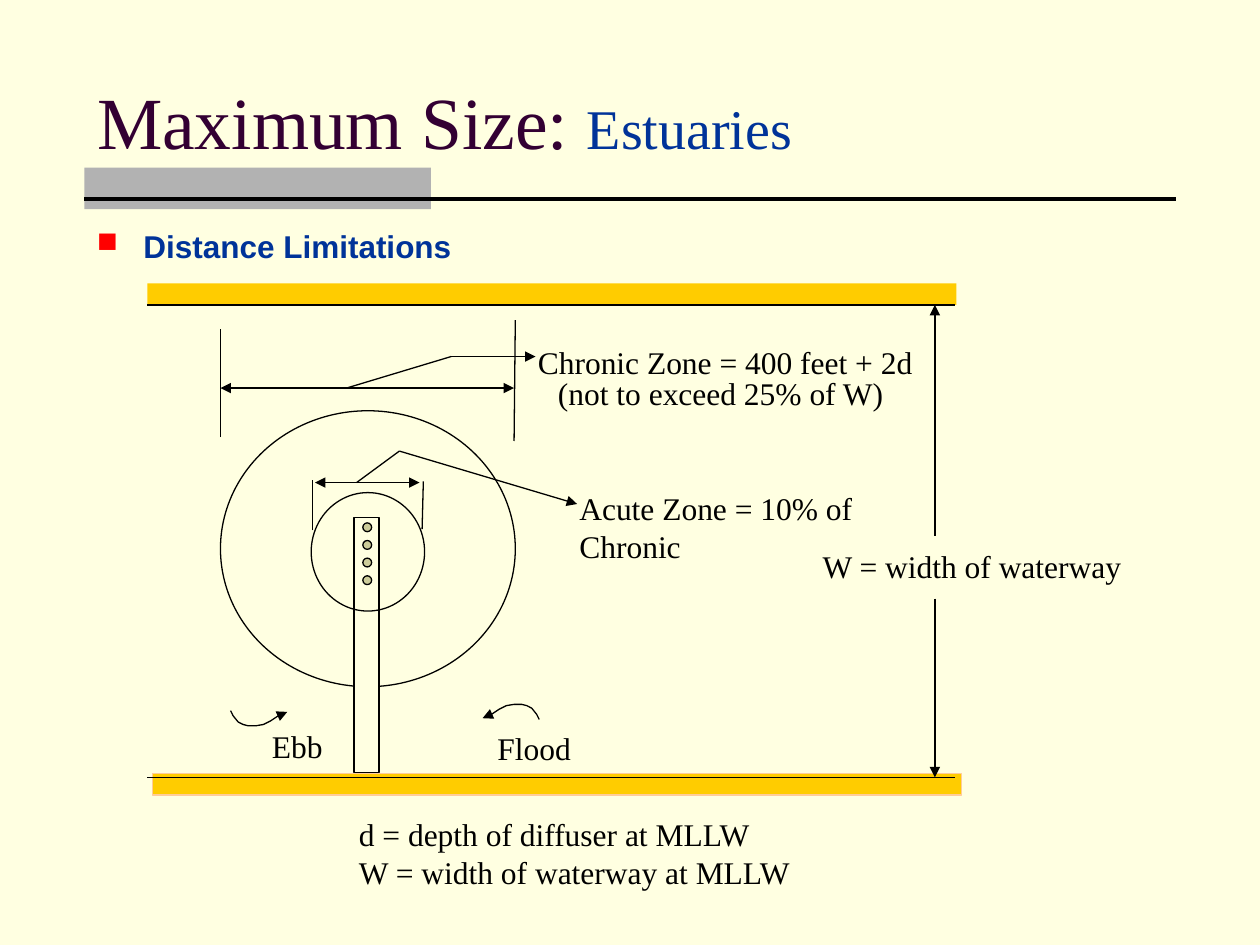
import pptx
import pptx.util
import pptx.dml.color
import pptx.enum.shapes
import pptx.enum.text
from lxml import etree

Inches, Pt = pptx.util.Inches, pptx.util.Pt
color = pptx.dml.color.RGBColor.from_string
kinds = pptx.enum.shapes.MSO_SHAPE
NS = "http://schemas.openxmlformats.org/drawingml/2006/main"
A = "{" + NS + "}"
BLACK, GOLD, CREAM, NAVY = "000000", "FFCC00", "FFFFE1", "003399"


def stroke(item, edge=BLACK, width=0.75, ends=()):
    """Set the outline, its arrowheads, and no shadow."""
    if edge:
        item.line.color.rgb = color(edge)
        item.line.width = Pt(width)
        for end in ends:
            etree.SubElement(item.line._get_or_add_ln(), A + end, type="triangle")
    else:
        item.line.fill.background()
    etree.SubElement(item._element.spPr, A + "effectLst")


def style(run, size, hue=BLACK, face="Times New Roman", bold=False):
    run.font.size = Pt(size)
    run.font.name = face
    run.font.bold = bold
    run.font.color.rgb = color(hue)


deck = pptx.Presentation()
deck.slide_width, deck.slide_height = Inches(10), Inches(7.5)
slide = deck.slides.add_slide(deck.slide_layouts[5])
slide.background.fill.solid()
slide.background.fill.fore_color.rgb = color(CREAM)
shapes = slide.shapes

# Title
title = shapes.title
title.left, title.top = Inches(0.67), Inches(0.33)
title.width, title.height = Inches(8.67), Inches(1.25)
frame = title.text_frame
frame.auto_size = pptx.enum.text.MSO_AUTO_SIZE.NONE
frame.vertical_anchor = pptx.enum.text.MSO_ANCHOR.MIDDLE
line = frame.paragraphs[0]
line.alignment = pptx.enum.text.PP_ALIGN.LEFT
for words, size, hue in [("Maximum Size: ", 42, "330033"), ("Estuaries", 32, NAVY)]:
    run = line.add_run()
    run.text = words
    style(run, size, hue)

# Title bar, mixing zones, diffuser with ports, and banks
dots = [(kinds.OVAL, 2.88, 4.15 + 0.14 * i, 0.07, 0.07, "CCCC99", BLACK)
        for i in range(4)]
forms = [
    (kinds.RECTANGLE, 0.67, 1.33, 2.75, 0.33, "B2B2B2", None),
    (kinds.OVAL, 1.75, 3.26, 2.34, 2.19, None, BLACK),
    (kinds.RECTANGLE, 1.21, 6.14, 6.42, 0.17, GOLD, "FFCC99"),
    (kinds.RECTANGLE, 2.81, 4.11, 0.2, 2.02, CREAM, BLACK),
    *dots,
    (kinds.OVAL, 2.47, 3.91, 0.9, 0.94, None, BLACK),
    (kinds.RECTANGLE, 1.17, 2.25, 6.42, 0.17, GOLD, None),
]
for kind, x, y, w, h, fill, edge in forms:
    form = shapes.add_shape(kind, Inches(x), Inches(y), Inches(w), Inches(h))
    if fill:
        form.fill.solid()
        form.fill.fore_color.rgb = color(fill)
    else:
        form.fill.background()
    stroke(form, edge)

# Straight lines: rule, banks, zone limits, dimensions and leaders
tip, both = ("tailEnd",), ("headEnd", "tailEnd")
lines = [
    (0.67, 1.58, 9.33, 1.58, 2.25, ()),
    (1.17, 2.42, 7.58, 2.42, 0.75, ()),
    (1.17, 6.17, 7.58, 6.17, 0.75, ()),
    (1.75, 3.47, 1.75, 2.61, 0.75, ()),
    (4.08, 3.5, 4.09, 2.54, 0.75, ()),
    (2.48, 4.21, 2.48, 3.81, 0.75, ()),
    (3.35, 4.2, 3.36, 3.82, 0.75, ()),
    (7.42, 4.75, 7.42, 6.17, 0.75, tip),
    (7.42, 4.25, 7.42, 2.42, 0.75, tip),
    (1.75, 3.08, 4.08, 3.08, 0.75, both),
    (2.75, 3.08, 3.58, 2.83, 0.75, ()),
    (3.58, 2.83, 4.25, 2.83, 0.75, tip),
    (2.5, 3.83, 3.33, 3.83, 0.75, both),
    (3.17, 3.58, 2.83, 3.83, 0.75, ()),
    (3.17, 3.58, 4.58, 4, 0.75, tip),
]
for x1, y1, x2, y2, width, ends in lines:
    link = shapes.add_connector(pptx.enum.shapes.MSO_CONNECTOR.STRAIGHT,
                                Inches(x1), Inches(y1), Inches(x2), Inches(y2))
    stroke(link, BLACK, width, ends)

# Tide arrows: one bend, turned half way round for the flood
bend = [(0, 0), (0.02, 0.04), (0.06, 0.09), (0.1, 0.11), (0.14, 0.12),
        (0.2, 0.12), (0.26, 0.11), (0.32, 0.08), (0.38, 0.04), (0.45, 0.01)]
for x, y, turn in [(1.83, 5.64, 1), (4.28, 5.71, -1)]:
    spots = [(Inches(x + turn * dx), Inches(y + turn * dy)) for dx, dy in bend]
    path = shapes.build_freeform(*spots[0])
    path.add_line_segments(spots[1:], close=False)
    curve = path.convert_to_shape()
    curve.fill.background()
    stroke(curve, ends=tip)

# Labels
labels = [
    (0.67, 1.75, 8.67, 0.45, "Distance Limitations"),
    (6.43, 4.29, 2.82, 0.4, "W = width of waterway"),
    (4.17, 2.67, 3.75, 0.41, "Chronic Zone = 400 feet + 2d"),
    (4.33, 2.92, 2.96, 0.4, "(not to exceed 25% of W)"),
    (4.5, 3.83, 2.64, 0.41, "Acute Zone = 10% of Chronic"),
    (2.06, 5.72, 0.77, 0.28, "Ebb"),
    (3.85, 5.74, 1.06, 0.26, "Flood"),
    (2.75, 6.42, 3.83, 0.71,
     "d = depth of diffuser at MLLW\nW = width of waterway at MLLW"),
]
for x, y, w, h, words in labels:
    box = shapes.add_textbox(Inches(x), Inches(y), Inches(w), Inches(h))
    frame = box.text_frame
    frame.word_wrap = True
    frame.text = words
    for line in frame.paragraphs:
        style(line.runs[0], 18)
    # The heading is a bulleted line
    if words == "Distance Limitations":
        style(line.runs[0], 18, NAVY, "Arial", True)
        line.space_before = Pt(3.6)
        props = line._p.get_or_add_pPr()
        props.set("marL", str(Inches(0.37)))
        props.set("indent", str(Inches(-0.37)))
        tint = etree.SubElement(props, A + "buClr")
        etree.SubElement(tint, A + "srgbClr", val="FF0000")
        etree.SubElement(props, A + "buSzPct", val="90000")
        etree.SubElement(props, A + "buChar", char="■")

deck.save("out.pptx")
